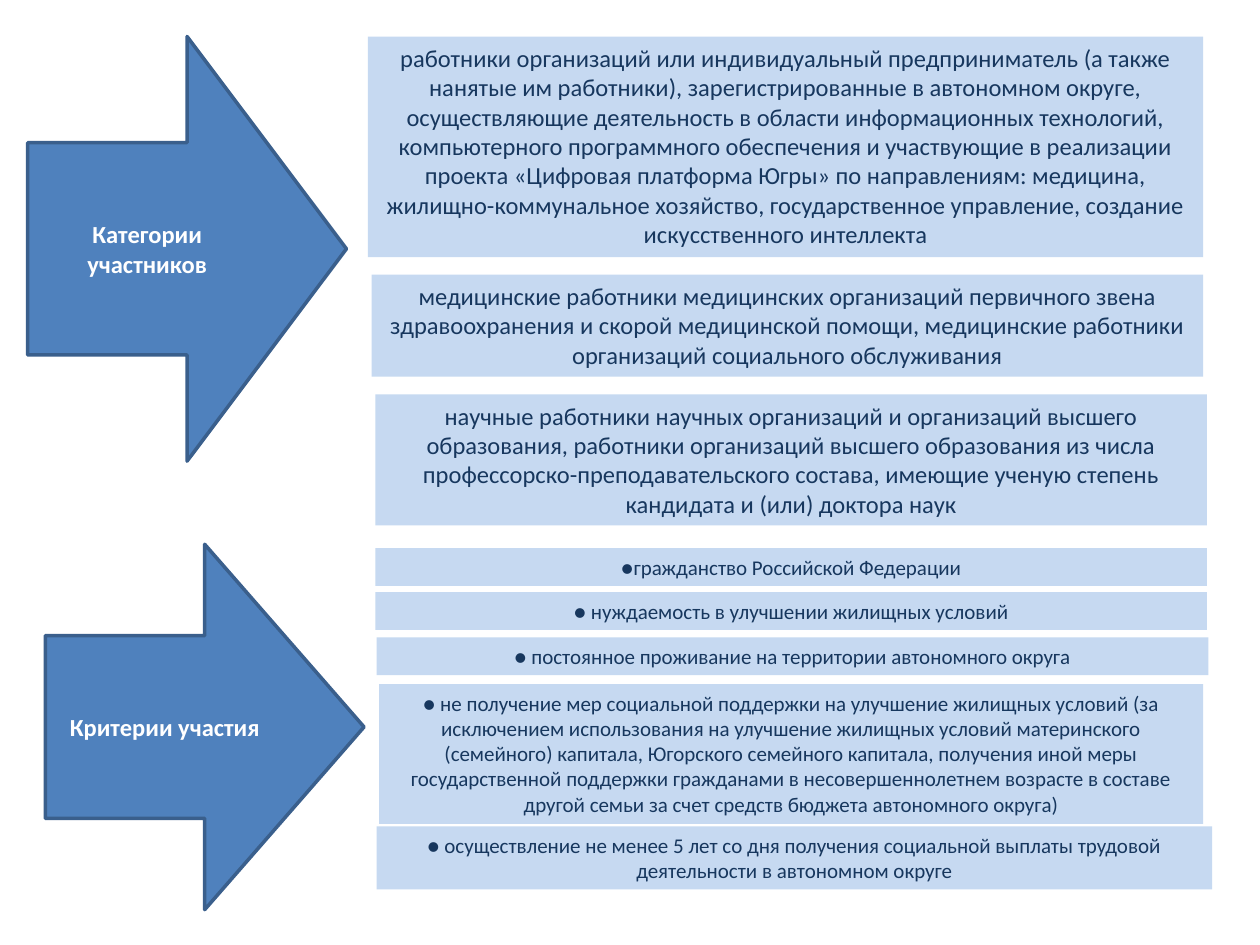
from dataclasses import dataclass

from pptx import Presentation
from pptx.dml.color import RGBColor
from pptx.enum.shapes import MSO_SHAPE
from pptx.enum.text import MSO_ANCHOR, MSO_AUTO_SIZE, PP_ALIGN
from pptx.util import Inches, Pt

RECTANGLE = MSO_SHAPE.RECTANGLE
RIGHT_ARROW = MSO_SHAPE.RIGHT_ARROW
TOP = MSO_ANCHOR.TOP
MIDDLE = MSO_ANCHOR.MIDDLE
GROW = MSO_AUTO_SIZE.SHAPE_TO_FIT_TEXT
FIXED = MSO_AUTO_SIZE.NONE
CENTER = PP_ALIGN.CENTER


@dataclass(frozen=True)
class Theme:
    font: str = "Calibri"
    panel: RGBColor = RGBColor(0xC6, 0xD9, 0xF1)
    ink: RGBColor = RGBColor(0x17, 0x37, 0x5E)
    arrow: RGBColor = RGBColor(0x4F, 0x81, 0xBD)
    outline: RGBColor = RGBColor(0x3A, 0x5F, 0x8C)
    arrow_ink: RGBColor = RGBColor(0xFF, 0xFF, 0xFF)
    large: int = 14
    small: int = 12
    outline_width: int = 2


@dataclass(frozen=True)
class Block:
    left: float
    top: float
    width: float
    height: float
    text: str


THEME = Theme()
ARROW_WIDTH = 2.53

HEADINGS = [
    Block(0.22, 0.29, ARROW_WIDTH, 3.37, "Категории участников"),
    Block(0.36, 4.32, ARROW_WIDTH, 2.9, "Критерии участия"),
]

CATEGORIES = [
    Block(2.92, 0.29, 6.63, 1.75,
          "работники организаций или индивидуальный предприниматель (а также "
          "нанятые им работники), зарегистрированные в автономном округе, "
          "осуществляющие деятельность в области информационных технологий, "
          "компьютерного программного обеспечения и участвующие в реализации "
          "проекта «Цифровая платформа Югры» по направлениям: медицина, "
          "жилищно-коммунальное хозяйство, государственное управление, создание "
          "искусственного интеллекта"),
    Block(2.95, 2.18, 6.6, 0.81,
          "медицинские работники медицинских организаций первичного звена "
          "здравоохранения и скорой медицинской помощи, медицинские работники "
          "организаций социального обслуживания"),
    Block(2.98, 3.13, 6.6, 1.04,
          "научные работники научных организаций и организаций высшего "
          "образования, работники организаций высшего образования из числа "
          "профессорско-преподавательского состава, имеющие ученую степень "
          "кандидата и (или) доктора наук"),
]

CRITERIA = [
    Block(2.98, 4.35, 6.6, 0.3, "●гражданство Российской Федерации"),
    Block(2.98, 4.7, 6.6, 0.3, "● нуждаемость в улучшении жилищных условий"),
    Block(2.99, 5.06, 6.6, 0.3,
          "● постоянное проживание на территории автономного округа"),
    Block(3.01, 5.43, 6.54, 1.11,
          "● не получение мер социальной поддержки на улучшение жилищных условий (за "
          "исключением использования на улучшение жилищных условий материнского "
          "(семейного) капитала, Югорского семейного капитала, получения иной меры "
          "государственной поддержки гражданами в несовершеннолетнем возрасте в составе "
          "другой семьи за счет средств бюджета автономного округа)"),
    Block(2.99, 6.56, 6.63, 0.5,
          "● осуществление не менее 5 лет со дня получения социальной выплаты трудовой "
          "деятельности в автономном округе"),
]


def apply_format(target, values: dict) -> None:
    for attribute, value in values.items():
        setattr(target, attribute, value)


def draw_block(slide, block: Block, geometry, fill: RGBColor, ink: RGBColor,
               frame_format: dict, font_format: dict):
    body = slide.shapes.add_shape(
        geometry, Inches(block.left), Inches(block.top),
        Inches(block.width), Inches(block.height))
    body.shadow.inherit = False
    body.fill.solid()
    body.fill.fore_color.rgb = fill
    body.line.fill.background()
    frame = body.text_frame
    apply_format(frame, {"word_wrap": True, **frame_format})
    paragraph = frame.paragraphs[0]
    paragraph.alignment = CENTER
    wording = paragraph.add_run()
    wording.text = block.text
    apply_format(wording.font, {"name": THEME.font, **font_format})
    wording.font.color.rgb = ink
    return body


def draw_panel(slide, block: Block, size: int) -> None:
    draw_block(slide, block, RECTANGLE, THEME.panel, THEME.ink,
               {"vertical_anchor": TOP, "auto_size": GROW},
               {"size": Pt(size), "bold": False})


def draw_heading(slide, block: Block) -> None:
    arrow = draw_block(slide, block, RIGHT_ARROW, THEME.arrow, THEME.arrow_ink,
                       {"vertical_anchor": MIDDLE, "auto_size": FIXED},
                       {"size": Pt(THEME.large), "bold": True})
    arrow.line.color.rgb = THEME.outline
    arrow.line.width = Pt(THEME.outline_width)


def main() -> None:
    deck = Presentation()
    apply_format(deck, {"slide_width": Inches(10), "slide_height": Inches(7.5)})
    slide = deck.slides.add_slide(deck.slide_layouts[6])
    for heading in HEADINGS:
        draw_heading(slide, heading)
    for panels, size in ((CATEGORIES, THEME.large), (CRITERIA, THEME.small)):
        for panel in panels:
            draw_panel(slide, panel, size)
    deck.save("out.pptx")


if __name__ == "__main__":
    main()
